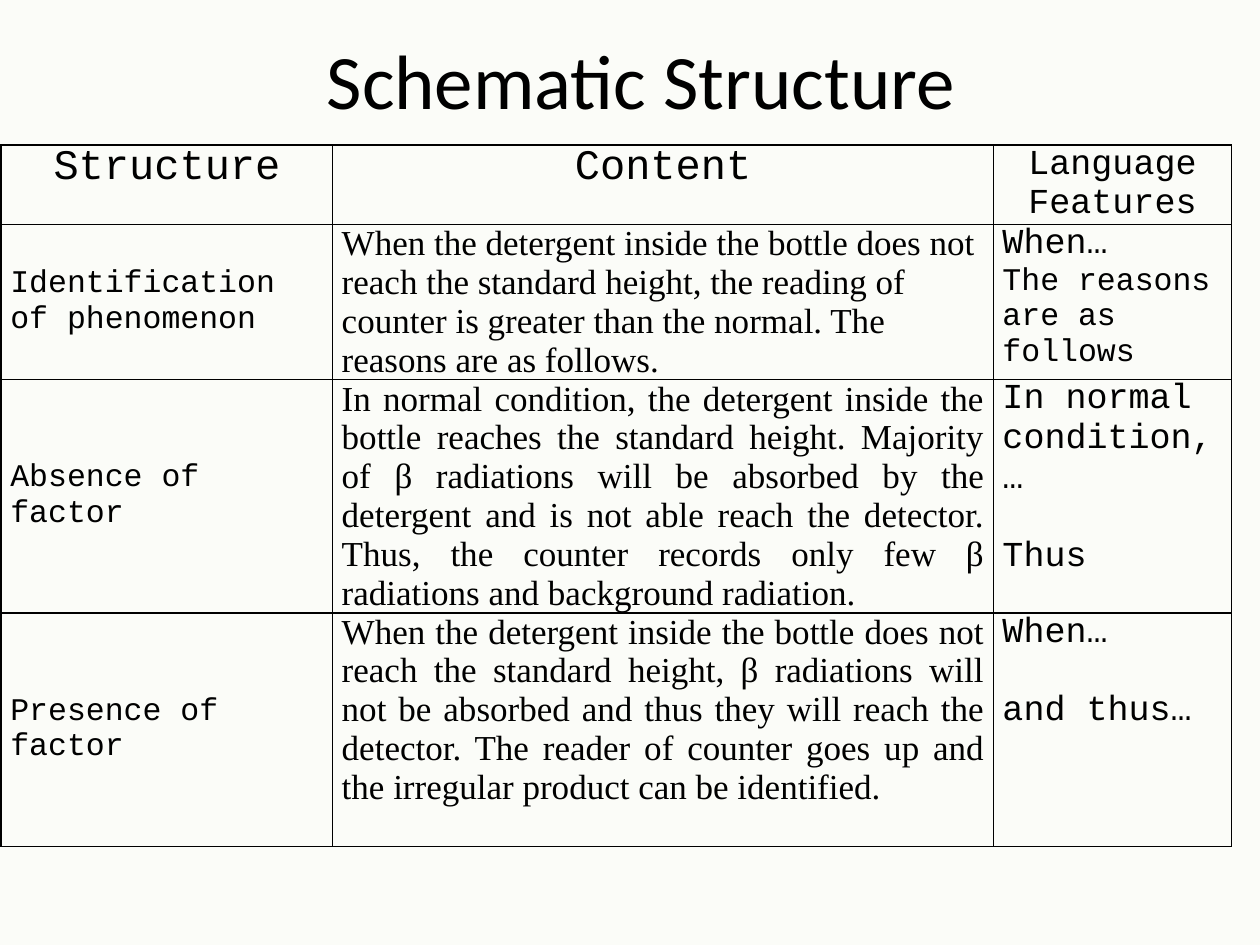
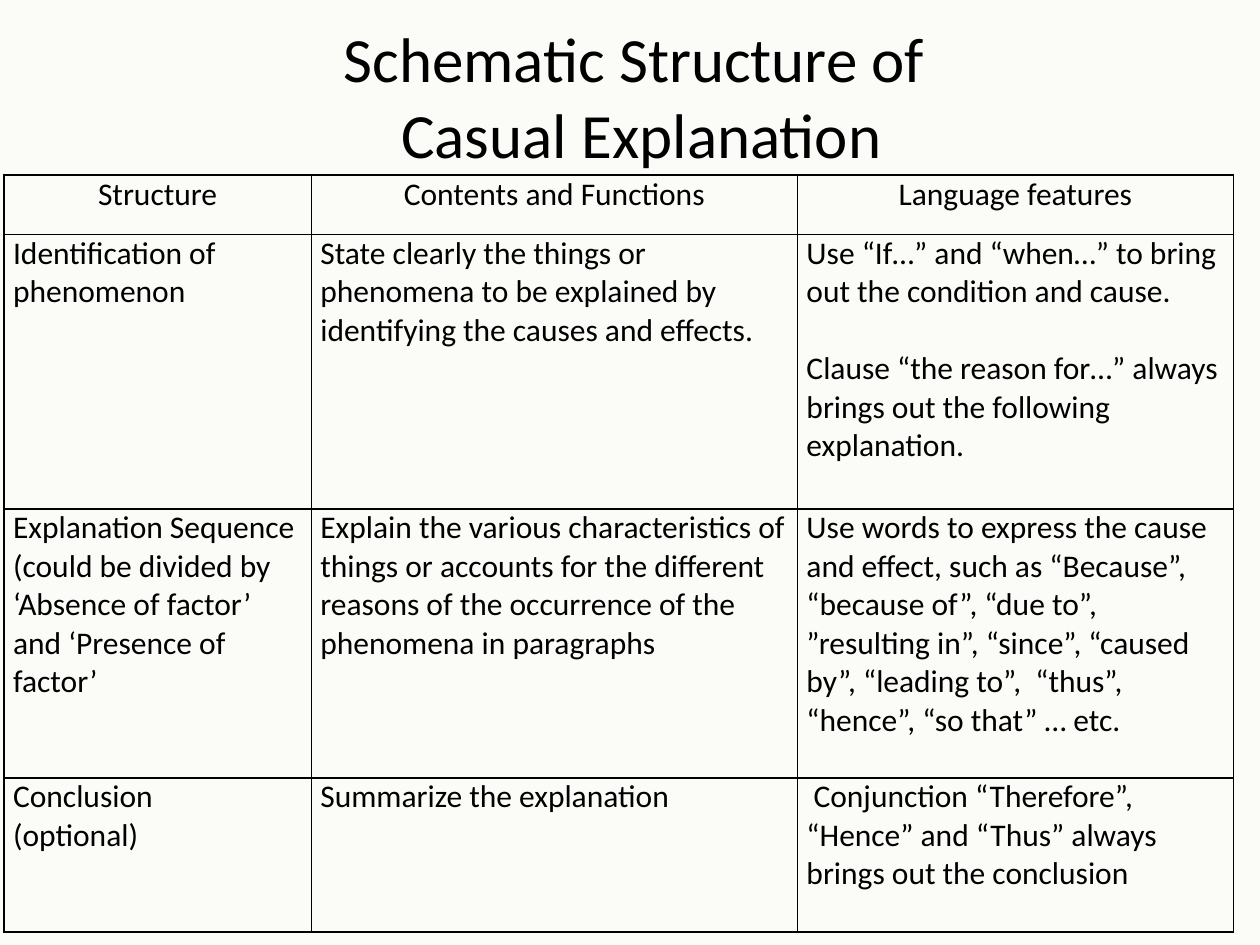
import pptx
import pptx.dml.color
import pptx.enum.text
import pptx.oxml
import pptx.oxml.ns
import pptx.util
from dataclasses import dataclass
from pptx.util import Pt

ALIGN = pptx.enum.text.PP_ALIGN
ANCHOR = pptx.enum.text.MSO_ANCHOR

# Shared style
PAPER = pptx.dml.color.RGBColor(0xFB, 0xFC, 0xF8)
INK = pptx.dml.color.RGBColor(0x00, 0x00, 0x00)
SANS, MONO, SERIF = "Calibri", "Courier New", "Times New Roman"
BLANK_LINE = 22


@dataclass
class Para:
    text: str
    size: int = 18
    font: str = SANS
    align: ALIGN = ALIGN.LEFT
    before: int = 0


class Deck:
    """Holds the shared style and the current slide."""

    def __init__(self):
        self.prs = pptx.Presentation()
        self.prs.slide_width, self.prs.slide_height = Pt(720), Pt(540)
        self.slide = None

    def set_text(self, paragraph, para):
        paragraph.text = para.text
        paragraph.alignment = para.align
        paragraph.space_before = Pt(para.before)
        font = paragraph.font
        font.name, font.size, font.color.rgb = para.font, Pt(para.size), INK

    def new_slide(self, heading, top, size):
        self.slide = self.prs.slides.add_slide(self.prs.slide_layouts[5])
        fill = self.slide.background.fill
        fill.solid()
        fill.fore_color.rgb = PAPER
        title = self.slide.shapes.title
        title.left, title.top = Pt(42.5), Pt(top)
        title.width, title.height = Pt(648), Pt(90)
        frame = title.text_frame
        frame.auto_size = pptx.enum.text.MSO_AUTO_SIZE.NONE
        frame.vertical_anchor = ANCHOR.MIDDLE
        self.set_text(frame.paragraphs[0], Para(heading, size, align=ALIGN.CENTER))

    def border(self, cell):
        properties = cell._tc.get_or_add_tcPr()
        for position, side in enumerate(("lnL", "lnR", "lnT", "lnB")):
            line = pptx.oxml.parse_xml(
                f'<a:{side} {pptx.oxml.ns.nsdecls("a")} w="{Pt(1)}">'
                f'<a:solidFill><a:srgbClr val="{INK}"/></a:solidFill></a:{side}>')
            properties.insert(position, line)

    def table(self, left, top, widths, heights, rows, label_anchor=ANCHOR.TOP):
        """Each cell in rows is a list of Para."""
        table = self.slide.shapes.add_table(
            len(heights), len(widths), Pt(left), Pt(top),
            Pt(sum(widths)), Pt(sum(heights))).table
        table.first_row = table.horz_banding = False
        for column, width in zip(table.columns, widths):
            column.width = Pt(width)
        for row, height in zip(table.rows, heights):
            row.height = Pt(height)
        for r, row in enumerate(rows):
            for c, paras in enumerate(row):
                cell = table.cell(r, c)
                cell.margin_left = cell.margin_right = Pt(5.2)
                cell.margin_top = cell.margin_bottom = 0
                is_row_label = r > 0 and c == 0
                cell.vertical_anchor = label_anchor if is_row_label else ANCHOR.TOP
                cell.fill.background()
                self.border(cell)
                frame = cell.text_frame
                for i, para in enumerate(paras):
                    target = frame.add_paragraph() if i else frame.paragraphs[0]
                    self.set_text(target, para)


def header(text, size=18, font=SANS):
    return [Para(text, size, font, ALIGN.CENTER)]


def example_row(stage, content, *features, align=ALIGN.JUSTIFY):
    return [[Para(stage, 18, MONO)], [Para(content, 20, SERIF, align)], list(features)]


def feature(text, size=20, before=0):
    return Para(text, size, MONO, before=before)


def main():
    deck = Deck()

    # Slide 1: worked example
    deck.new_slide("Schematic Structure", top=0, size=44)
    deck.table(0.7, 82.8, (189.4, 377.6, 136.2), (45.4, 88.8, 133.2, 133.4), [
        [header("Structure", 24, MONO), header("Content", 24, MONO),
         header("Language Features", 20, MONO)],
        example_row(
            "Identification of phenomenon",
            "When the detergent inside the bottle does not reach the standard "
            "height, the reading of counter is greater than the normal. The "
            "reasons are as follows.",
            feature("When…"), feature("The reasons are as follows", 18),
            align=ALIGN.LEFT),
        example_row(
            "Absence of factor",
            "In normal condition, the detergent inside the bottle reaches the "
            "standard height. Majority of β radiations will be absorbed by the "
            "detergent and is not able reach the detector. Thus, the counter "
            "records only few β radiations and background radiation.",
            feature("In normal condition,…"), feature("Thus", before=BLANK_LINE)),
        example_row(
            "Presence of factor",
            "When the detergent inside the bottle does not reach the standard "
            "height, β radiations will not be absorbed and thus they will reach "
            "the detector. The reader of counter goes up and the irregular "
            "product can be identified.",
            feature("When…"), feature("and thus…", before=BLANK_LINE)),
    ], label_anchor=ANCHOR.MIDDLE)

    # Slide 2: general scheme
    deck.new_slide("Schematic Structure of \vCasual Explanation", top=9.4, size=36)
    deck.table(2.3, 100, (175.6, 277.8, 249.2), (34, 156.8, 153.8, 88), [
        [header("Structure"), header("Contents and Functions"),
         header("Language features")],
        [[Para("Identification of phenomenon")],
         [Para("State clearly the things or phenomena to be explained by "
               "identifying the causes and effects.")],
         [Para("Use “If…” and “when…” to bring out the condition and cause."),
          Para("Clause “the reason for…” always brings out the following "
               "explanation.", before=BLANK_LINE)]],
        [[Para("Explanation Sequence (could be divided by ‘Absence of factor’ "
               "and ‘Presence of factor’")],
         [Para("Explain the various characteristics of things or accounts for "
               "the different reasons of the occurrence of the phenomena in "
               "paragraphs")],
         [Para("Use words to express the cause and effect, such as “Because”, "
               "“because of”, “due to”, ”resulting in”, “since”, “caused by”, "
               "“leading to”,  “thus”, “hence”, “so that” … etc.")]],
        [[Para("Conclusion"), Para("(optional)")],
         [Para("Summarize the explanation")],
         [Para(" Conjunction “Therefore”, “Hence” and “Thus” always brings out "
               "the conclusion")]],
    ])

    deck.prs.save("out.pptx")


if __name__ == "__main__":
    main()
